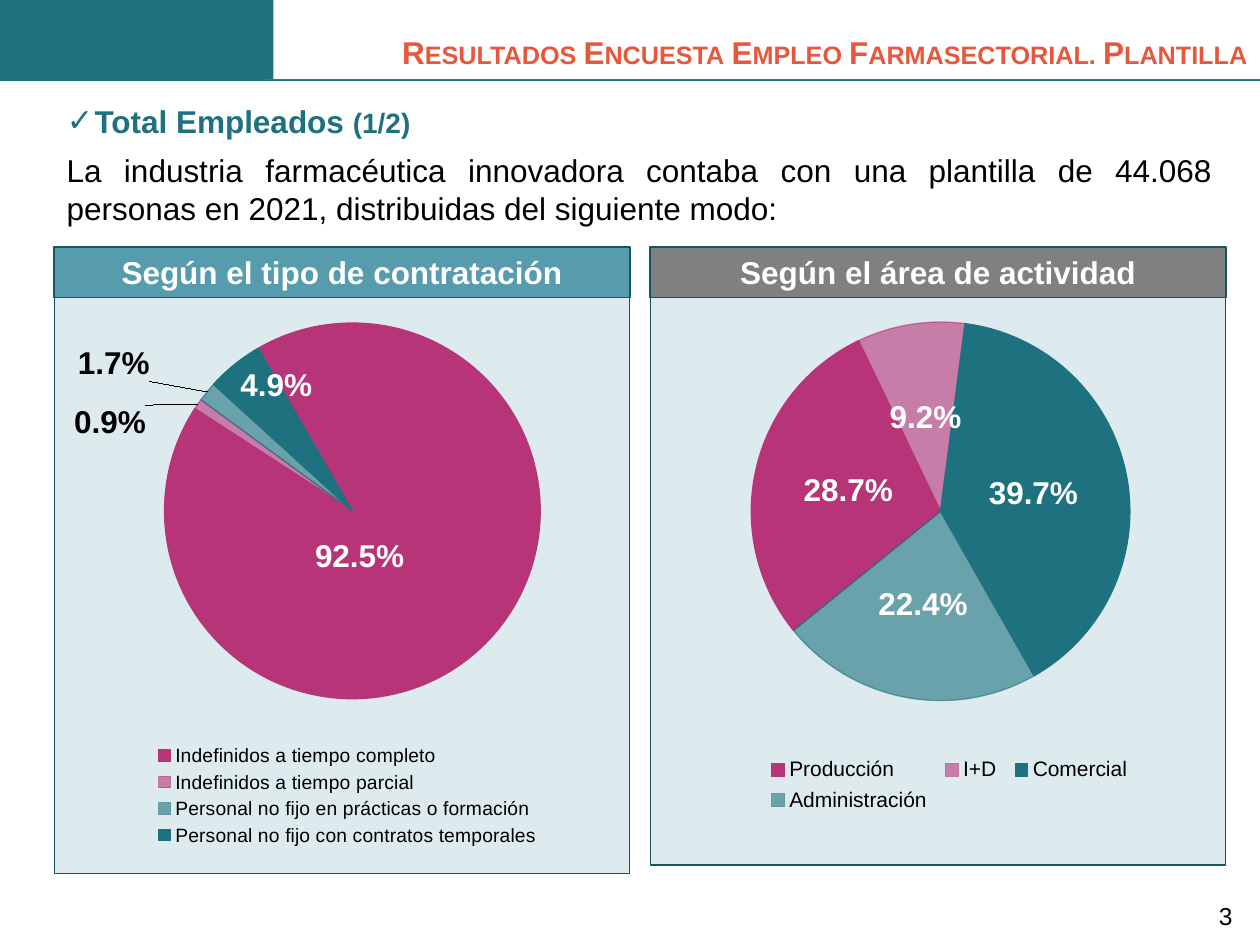
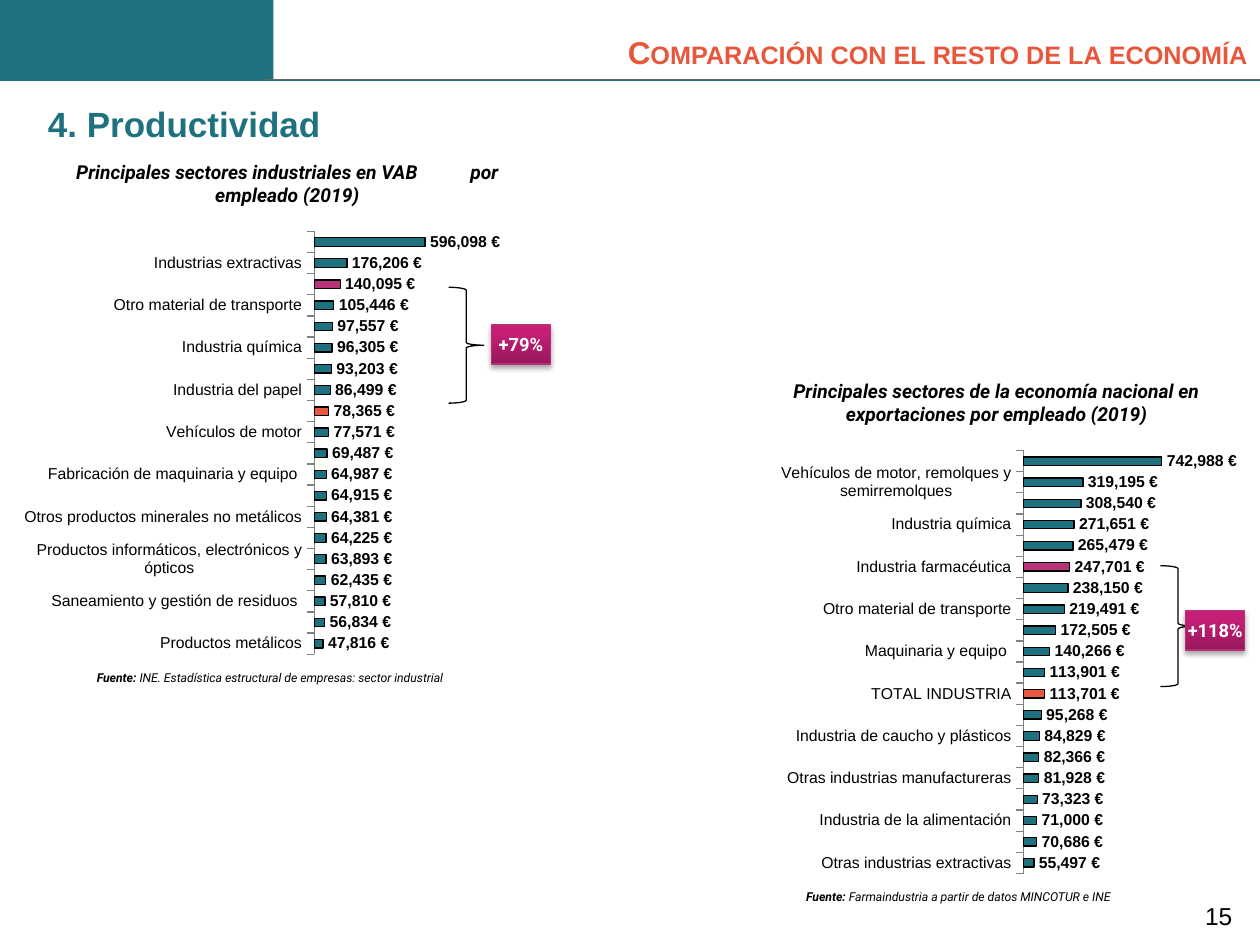
import pptx
import pptx.chart.data
import pptx.dml.color
import pptx.enum.chart
import pptx.enum.shapes
import pptx.enum.text
import pptx.oxml
import pptx.oxml.ns
import pptx.util

Inches, Pt = pptx.util.Inches, pptx.util.Pt
RGBColor = pptx.dml.color.RGBColor
Shape = pptx.enum.shapes.MSO_SHAPE
Anchor = pptx.enum.text.MSO_ANCHOR
Align = pptx.enum.text.PP_ALIGN
ChartType = pptx.enum.chart.XL_CHART_TYPE
LabelPosition = pptx.enum.chart.XL_LABEL_POSITION
qn = pptx.oxml.ns.qn

BAND = RGBColor(0x1E, 0x71, 0x7F)
TEAL = RGBColor(0x1E, 0x72, 0x7F)
DARK_TEAL = RGBColor(0x16, 0x55, 0x5F)
LIGHT_TEAL = RGBColor(0x57, 0x9C, 0xAD)
PALE = RGBColor(0xDD, 0xEB, 0xEF)
MAGENTA = RGBColor(0xB7, 0x34, 0x79)
BADGE_LINE = RGBColor(0xB6, 0x30, 0x77)
ORANGE = RGBColor(0xE8, 0x57, 0x3B)
GRAY = RGBColor(0x80, 0x80, 0x80)
RULE_GRAY = RGBColor(0x66, 0x66, 0x66)
BLACK = RGBColor(0, 0, 0)
WHITE = RGBColor(0xFF, 0xFF, 0xFF)
EUROS = '#,##0\\ "€"'

BADGE_GRADIENT = """<a:gradFill %s><a:gsLst>
<a:gs pos="0"><a:srgbClr val="97185B"/></a:gs>
<a:gs pos="80000"><a:srgbClr val="C41F76"/></a:gs>
<a:gs pos="100000"><a:srgbClr val="C81C77"/></a:gs>
</a:gsLst><a:lin ang="16200000" scaled="0"/></a:gradFill>"""
BADGE_SHADOW = """<a:effectLst %s><a:outerShdw blurRad="39370" dist="22860" dir="5400000"
rotWithShape="0"><a:srgbClr val="000000"><a:alpha val="35000"/></a:srgbClr></a:outerShdw></a:effectLst>"""
PANEL_FORMAT = f"""<c:spPr %s><a:solidFill><a:srgbClr val="{PALE}"/></a:solidFill>
<a:ln w="9525"><a:solidFill><a:srgbClr val="{DARK_TEAL}"/></a:solidFill></a:ln></c:spPr>"""

CONTRACTS = [("Indefinidos a tiempo completo", 0.925), ("Indefinidos a tiempo parcial", 0.009),
             ("Personal no fijo en prácticas o formación", 0.017),
             ("Personal no fijo con contratos temporales", 0.049)]
AREAS = [("Producción", 0.287), ("I+D", 0.092), ("Comercial", 0.397), ("Administración", 0.224)]
ADDED_VALUE = [
    ("Productos metálicos", 47816), ("Alimentación, bebidas y tabaco", 56834),
    ("Saneamiento y gestión de residuos ", 57810), ("Material y equipo eléctrico", 62435),
    ("Productos informáticos, electrónicos y ópticos", 63893),
    ("Productos de caucho y plásticos", 64225), ("Otros productos minerales no metálicos", 64381),
    ("Instalación de maquinaria y equipo", 64915), ("Fabricación de maquinaria y equipo ", 64987),
    ("Industria textil, confección de prendas de vestir e industria del cuero y del calzado", 69487),
    ("Vehículos de motor", 77571), ("TOTAL INDUSTRIA", 78365), ("Industria del papel", 86499),
    ("Metalurgia", 93203), ("Industria química", 96305),
    ("Captación y distribución de agua", 97557), ("Otro material de transporte", 105446),
    ("Industria farmacéutica", 140095), ("Industrias extractivas", 176206),
    ("Electricidad y gas", 596098)]
EXPORTS = [
    ("Otras industrias extractivas", 55497), ("Fabricación de bebidas", 70686),
    ("Industria de la alimentación", 71000), ("Otros productos minerales no metálicos", 73323),
    ("Otras industrias manufactureras", 81928), ("Industria textil", 82366),
    ("Industria de caucho y plásticos", 84829), ("Industria del papel", 95268),
    ("TOTAL INDUSTRIA", 113701), ("Industria del cuero y del calzado", 113901),
    ("Maquinaria y equipo ", 140266), ("Material y equipo eléctrico", 172505),
    ("Otro material de transporte", 219491),
    ("Productos informáticos, electrónicos y ópticos", 238150),
    ("Industria farmacéutica", 247701), ("Metalurgia; hierro, acero y ferroaleaciones", 265479),
    ("Industria química", 271651), ("Confección de prendas de vestir", 308540),
    ("Vehículos de motor, remolques y semirremolques", 319195),
    ("Extracción de minerales metálicos", 742988)]


def lengths(*values):
    return [Inches(value) for value in values]


def xml(template, *prefixes):
    return pptx.oxml.parse_xml(template % pptx.oxml.ns.nsdecls(*prefixes))


def style_font(font, size, color=BLACK, bold=False, italic=False, name="Arial"):
    font.name, font.size, font.bold, font.italic = name, Pt(size), bold, italic
    font.color.rgb = color


def write(box, text, size, align=Align.LEFT, anchor=Anchor.TOP, **style):
    """Fill a shape with one paragraph in one style and return the paragraph."""
    frame = box.text_frame
    frame.word_wrap, frame.vertical_anchor = True, anchor
    frame.auto_size = pptx.enum.text.MSO_AUTO_SIZE.NONE
    frame.text = text
    para = frame.paragraphs[0]
    para.alignment, para.space_before = align, Pt(0)
    style_font(para.runs[0].font, size, **style)
    return para


def add_span(para, text, size, **style):
    span = para.add_run()
    span.text = text
    style_font(span.font, size, **style)
    return span


def place(box, left, top, width, height):
    box.left, box.top, box.width, box.height = lengths(left, top, width, height)


def add_text(page, area, text, size, **style):
    return write(page.shapes.add_textbox(*lengths(*area)), text, size, **style)


def add_block(page, area, fill=None, line=None, kind=Shape.RECTANGLE):
    block = page.shapes.add_shape(kind, *lengths(*area))
    block.shadow.inherit = False
    if fill is None:
        block.fill.background()
    else:
        block.fill.solid()
        block.fill.fore_color.rgb = fill
    if line is None:
        block.line.fill.background()
    else:
        block.line.color.rgb, block.line.width = line, Pt(0.75)
    return block


def add_rule(page, left, top, color):
    rule = page.shapes.add_connector(pptx.enum.shapes.MSO_CONNECTOR.STRAIGHT,
                                     *lengths(left, top, 10, top))
    rule.line.color.rgb, rule.line.width = color, Pt(0.5)
    rule.element.spPr.append(xml("<a:effectLst %s/>", "a"))


def add_page(deck, title, number, heading, heading_area, heading_size, bullet=None):
    """Add a slide with band, rules, title, section heading and number."""
    page = deck.slides.add_slide(deck.slide_layouts[1])
    add_block(page, (0, 0, 2.17, 0.64), BAND)
    add_rule(page, 0, 0.64, BAND)
    add_rule(page, 2.09, 0.63, RULE_GRAY)
    add_text(page, (7.32, 7.06, 2.56, 0.42), str(number), 14, align=Align.RIGHT,
             anchor=Anchor.MIDDLE)
    place(page.shapes.title, 2.83, 0.21, 7.17, 0.4)
    para = write(page.shapes.title, title, 18, align=Align.RIGHT, color=ORANGE, bold=True)
    para.runs[0].font._element.set("cap", "small")

    body = page.placeholders[1]
    place(body, *heading_area)
    para = write(body, heading, heading_size, color=TEAL, bold=True)
    properties = para._p.get_or_add_pPr()
    indent = Inches(0.22) if bullet else 0
    properties.set("marL", str(indent))
    properties.set("indent", str(-indent))
    mark = f'<a:buChar %s char="{bullet}"/>' if bullet else "<a:buNone %s/>"
    properties.append(xml(mark, "a"))
    return page, para


def set_layout(element, index, x, y, width=None, height=None, inner=False):
    """Give a chart part a manual layout; without a size, x and y are shifts."""
    for old in element.findall(qn("c:layout")):
        element.remove(old)
    settings = [("layoutTarget", "inner")] if inner else []
    if width is not None:
        settings += [("xMode", "edge"), ("yMode", "edge")]
    settings += [("x", x), ("y", y)]
    if width is not None:
        settings += [("w", width), ("h", height)]
    parts = "".join(f'<c:{tag} val="{value}"/>' for tag, value in settings)
    element.insert(index, xml(f"<c:layout %s><c:manualLayout>{parts}</c:manualLayout></c:layout>", "c"))


def add_chart(page, kind, area, rows, number_format, plot_area):
    data = pptx.chart.data.CategoryChartData(number_format=number_format)
    data.categories = [name for name, _ in rows]
    data.add_series("Series 1", [value for _, value in rows])
    chart = page.shapes.add_chart(kind, *lengths(*area), data).chart
    chart.has_title = False
    chart.has_legend = False
    set_layout(chart.element.find(".//" + qn("c:plotArea")), 0, *plot_area, inner=True)
    return chart


def label_values(series, number_format, size, color=BLACK):
    labels = series.data_labels
    labels.show_value = True
    labels.number_format, labels.number_format_is_linked = number_format, False
    style_font(labels.font, size, color, bold=True)
    return labels


def add_pie(page, area, rows, start, slices, plot_area, legend_area, legend_size, label_moves=()):
    """Add a pie; slices are (colour, opaque), label_moves are (position, colour, x, y)."""
    chart = add_chart(page, ChartType.PIE, area, rows, "0.0%", plot_area)
    style_font(chart.font, 12)
    chart.element.find(qn("c:chart")).addnext(xml(PANEL_FORMAT, "c", "a"))
    plot = chart.plots[0]
    plot.vary_by_categories = True
    series = plot.series[0]
    for index, (color, opaque) in enumerate(slices):
        look = series.points[index].format
        look.fill.solid()
        look.fill.fore_color.rgb = color
        look.line.color.rgb, look.line.width = color, Pt(0.75)
        if not opaque:
            for tint in series.points[index].format.element.iter(qn("a:srgbClr")) \
                    if hasattr(look, "element") else look.fill._xPr.iter(qn("a:srgbClr")):
                tint.append(xml('<a:alpha %s val="60000"/>', "a"))
    label_values(series, "0.0%", 18, WHITE).position = LabelPosition.CENTER
    for index, (position, color, x, y) in enumerate(label_moves):
        label = series.points[index].data_label
        style_font(label.font, 18, color, bold=True)
        label.position = position
        set_layout(series.data_labels._element.findall(qn("c:dLbl"))[index], 1, x, y)
    pie = chart.element.find(".//" + qn("c:pieChart"))
    pie.append(xml(f'<c:firstSliceAng %s val="{start}"/>', "c"))

    chart.has_legend = True
    legend = chart.legend
    legend.position = pptx.enum.chart.XL_LEGEND_POSITION.BOTTOM
    legend.include_in_layout = False
    style_font(legend.font, legend_size)
    set_layout(legend._element, 1, *legend_area)


def add_sector_bars(page, left, top, rows):
    chart = add_chart(page, ChartType.BAR_CLUSTERED, (left, top, 4.13, 3.94), rows, EUROS,
                      (0.575, 0.055, 0.322, 0.852))
    style_font(chart.font, 10, name="Roboto")
    axis = chart.category_axis
    axis.major_tick_mark = pptx.enum.chart.XL_TICK_MARK.OUTSIDE
    axis.format.line.color.rgb = GRAY
    style_font(axis.tick_labels.font, 9)
    values = chart.value_axis
    values.minimum_scale, values.maximum_scale, values.major_unit = 0, 900000, 300000
    values.has_major_gridlines = values.visible = False
    plot = chart.plots[0]
    plot.gap_width, plot.vary_by_categories = 150, False
    series = plot.series[0]
    highlights = {"TOTAL INDUSTRIA": ORANGE, "Industria farmacéutica": MAGENTA}
    looks = [(series.format, TEAL)]
    looks += [(series.points[index].format, highlights[name])
              for index, (name, _) in enumerate(rows) if name in highlights]
    for look, color in looks:
        look.fill.solid()
        look.fill.fore_color.rgb = color
        look.line.color.rgb, look.line.width = BLACK, Pt(0.75)
    label_values(series, EUROS, 9).position = LabelPosition.OUTSIDE_END


def add_chart_title(page, left, top, text):
    box = add_block(page, (left, top, 3.62, 0.48), WHITE)
    box.text_frame.margin_left = box.text_frame.margin_right = Inches(0.04)
    return write(box, text, 11, align=Align.CENTER, bold=True, italic=True, name="Roboto")


def add_source(page, left, top, text):
    para = add_text(page, (left, top, 3.7, 0.22), "Fuente: ", 7, bold=True, italic=True,
                    name="Roboto")
    add_span(para, text, 7, italic=True, name="Roboto")


def add_gap_badge(page, brace_area, left, top, text):
    """Add a brace with the percentage gap it marks."""
    add_block(page, brace_area, line=BLACK, kind=Shape.RIGHT_BRACE)
    badge = add_block(page, (left, top, 0.47, 0.31), MAGENTA, BADGE_LINE)
    properties = badge.element.spPr
    solid = properties.find(qn("a:solidFill"))
    properties.replace(solid, xml(BADGE_GRADIENT, "a"))
    properties.replace(properties.find(qn("a:effectLst")), xml(BADGE_SHADOW, "a"))
    frame = badge.text_frame
    frame.margin_left = frame.margin_right = frame.margin_top = frame.margin_bottom = 0
    write(badge, text, 10.5, align=Align.CENTER, anchor=Anchor.MIDDLE, color=WHITE, bold=True,
          name="Roboto")


def add_panel_header(page, left, text, fill):
    header = add_block(page, (left, 1.96, 4.57, 0.4), fill, DARK_TEAL)
    write(header, text, 18, align=Align.CENTER, color=WHITE, bold=True)


def build_staff(deck):
    page, heading = add_page(deck, "Resultados Encuesta Empleo Farmasectorial. Plantilla", 3,
                             "Total Empleados ", (0.43, 0.76, 4.72, 0.4), 18, "✓")
    add_span(heading, "(1/2)", 16, color=TEAL, bold=True)
    add_text(page, (0.43, 1.15, 9.29, 0.71),
             "La industria farmacéutica innovadora contaba con una plantilla de 44.068 personas "
             "en 2021, distribuidas del siguiente modo:", 18, align=Align.JUSTIFY)
    center, outside = LabelPosition.CENTER, LabelPosition.OUTSIDE_END
    add_pie(page, (0.43, 2.33, 4.57, 4.61), CONTRACTS, 330,
            [(MAGENTA, True), (MAGENTA, False), (TEAL, False), (TEAL, True)],
            (0.191, 0.035, 0.654, 0.678), (0.17, 0.77, 0.68, 0.19), 11,
            [(center, WHITE, -0.1, -0.04), (outside, BLACK, -0.08, 0.07),
             (outside, BLACK, -0.09, -0.01), (center, WHITE, -0.03, -0.09)])
    add_panel_header(page, 0.43, "Según el tipo de contratación", LIGHT_TEAL)
    add_pie(page, (5.16, 2.33, 4.57, 4.54), AREAS, 231,
            [(MAGENTA, True), (MAGENTA, False), (TEAL, True), (TEAL, False)],
            (0.175, 0.038, 0.659, 0.685), (0.19, 0.8, 0.66, 0.12), 12)
    add_panel_header(page, 5.16, "Según el área de actividad", GRAY)


def build_productivity(deck):
    page, _ = add_page(deck, "Comparación con el resto de la economía", 15,
                       "4. Productividad", (0.28, 0.76, 4.72, 0.44), 20)
    add_sector_bars(page, 5.75, 3.36, EXPORTS)
    add_chart_title(page, 6.1, 2.96, "Principales sectores de la economía nacional en "
                                     "exportaciones por empleado (2019)")
    add_source(page, 6.3, 7.01, "Farmaindustria a partir de datos MINCOTUR e INE")
    add_gap_badge(page, (9.21, 4.49, 0.28, 0.96), 9.41, 4.85, "+118%")

    add_sector_bars(page, 0.12, 1.62, ADDED_VALUE)
    title = add_chart_title(page, 0.47, 1.22, "Principales sectores industriales en VAB")
    style = dict(bold=True, italic=True, name="Roboto")
    wide_space = add_span(title, " ", 11, **style)
    wide_space.font._element.set("spc", "2700")
    add_span(title, "por empleado (2019)", 11, **style)
    add_source(page, 0.67, 5.27, "INE. Estadística estructural de empresas: sector industrial")
    add_gap_badge(page, (3.56, 2.28, 0.28, 0.92), 3.9, 2.58, "+79%")


def main():
    deck = pptx.Presentation()
    deck.slide_width, deck.slide_height = lengths(10, 7.5)
    build_staff(deck)
    build_productivity(deck)
    deck.save("out.pptx")


if __name__ == "__main__":
    main()
